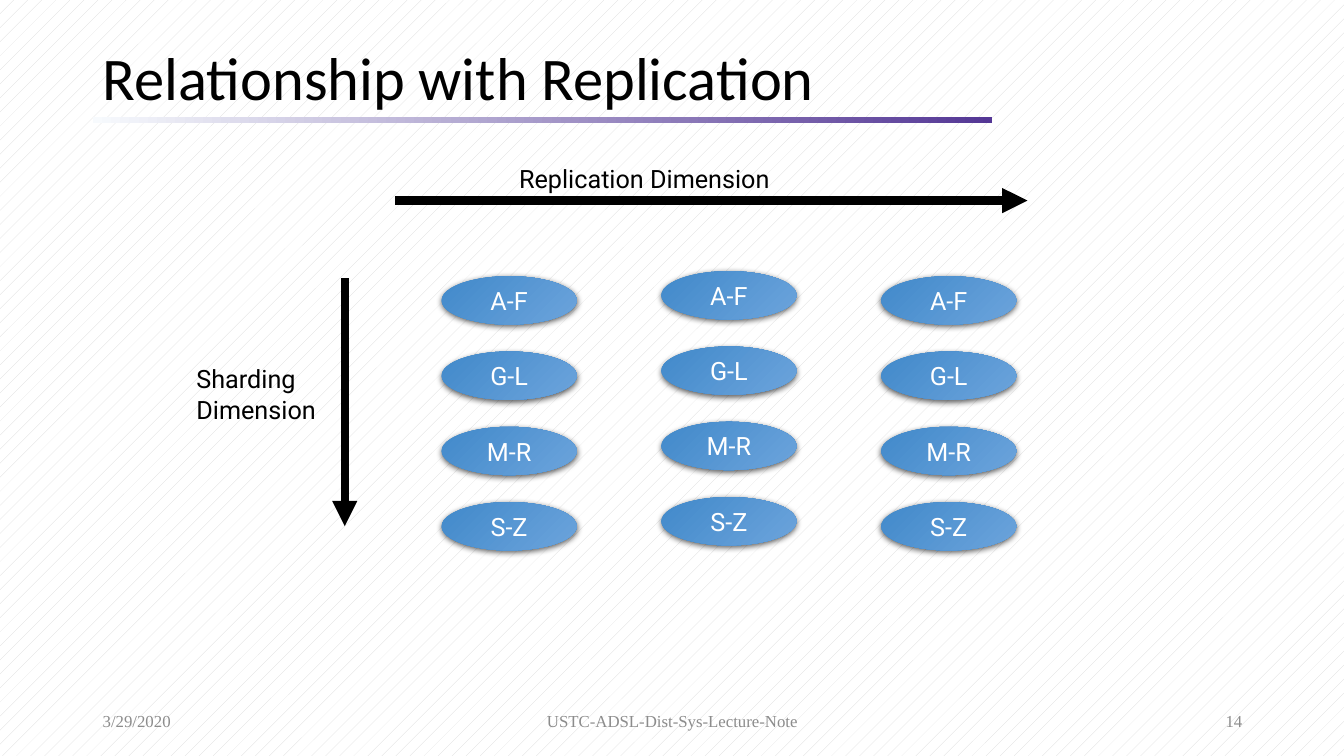
from pptx import Presentation
from pptx import util as u
from pptx.dml.color import RGBColor
from pptx.enum import dml, shapes, text
from pptx.oxml import parse_xml
from pptx.oxml.ns import nsdecls

# Content
TITLE = "Relationship with Replication"
SHARDS = ["A-F", "G-L", "M-R", "S-Z"]
REPLICA_LIFTS = [0, 0.05, 0]  # how far each replica column is raised
LEFT, CENTER, RIGHT = text.PP_ALIGN.LEFT, text.PP_ALIGN.CENTER, text.PP_ALIGN.RIGHT
LABELS = [  # text, box
    ("Replication Dimension", (5.05, 1.57, 2.71, 0.4)),
    ("Sharding\nDimension", (1.85, 3.56, 1.44, 0.71)),
]
ARROWS = [(3.92, 1.99, 10.19, 1.99), (3.42, 2.76, 3.42, 5.22)]
FOOTERS = [  # text, left, width, alignment
    ("3/29/2020", 0.92, 3, LEFT),
    ("USTC-ADSL-Dist-Sys-Lecture-Note", 4.42, 4.5, CENTER),
    ("14", 9.42, 3, RIGHT),
]

# Theme and grid
THEME = {
    "title": {"name": "Calibri", "size": 43.2, "color": "000000"},
    "label": {"name": "Roboto", "size": 18, "color": "000000"},
    "shard": {"name": "Roboto", "size": 18, "color": "FFFFFF"},
    "footer": {"name": "Times New Roman", "size": 12, "color": "8C8C8C"},
    "rule": ("F7FAFD", "543795"),
    "ellipse": ("4189CA", "6CA4DC"),
    "pattern": ("D9D9D9", "FFFFFF"),
    "arrow": "000000",
}
GRID_LEFT, GRID_TOP = 4.38, 2.74
COLUMN_STEP, ROW_STEP = 2.18, 0.747
SHARD_WIDTH, SHARD_HEIGHT = 1.34, 0.48
SHADOW = (
    f'<a:effectLst {nsdecls("a")}><a:outerShdw blurRad="57150" dist="19050" dir="5400000" '
    'algn="ctr" rotWithShape="0"><a:srgbClr val="000000"><a:alpha val="63000"/></a:srgbClr>'
    "</a:outerShdw></a:effectLst>"
)


def inches(values):
    return [u.Inches(value) for value in values]


def write(shape, words, style, alignment=LEFT, wrap=True, spacing=None,
          anchor=text.MSO_ANCHOR.MIDDLE):
    frame = shape.text_frame
    frame.word_wrap = wrap
    frame.vertical_anchor = anchor
    paragraph = frame.paragraphs[0]
    paragraph.text = words
    paragraph.alignment = alignment
    paragraph.line_spacing = spacing
    look = THEME[style]
    for run in paragraph.runs:
        for name, value in {"name": look["name"], "size": u.Pt(look["size"])}.items():
            setattr(run.font, name, value)
        run.font.color.rgb = RGBColor.from_string(look["color"])


def add_gradient_shape(parent, kind, box, colors, angle):
    shape = parent.add_shape(kind, *inches(box))
    shape.shadow.inherit = False
    shape.line.fill.background()
    shape.fill.gradient()
    shape.fill.gradient_angle = angle
    for stop, color in zip(shape.fill.gradient_stops, colors):
        stop.color.rgb = RGBColor.from_string(color)
    return shape


def add_shard(group, words, left, top):
    box = (left, top, SHARD_WIDTH, SHARD_HEIGHT)
    shard = add_gradient_shape(group, shapes.MSO_SHAPE.OVAL, box, THEME["ellipse"], 315)
    properties = shard._element.spPr
    properties.replace(properties.find("{*}effectLst"), parse_xml(SHADOW))
    write(shard, words, "shard", CENTER)


def add_arrow(slide, ends):
    arrow = slide.shapes.add_connector(shapes.MSO_CONNECTOR.STRAIGHT, *inches(ends))
    arrow.line.width = u.Pt(6)
    arrow.line.color.rgb = RGBColor.from_string(THEME["arrow"])
    arrow.line._get_or_add_ln().append(
        parse_xml(f'<a:tailEnd {nsdecls("a")} type="triangle"/>'))
    arrow._element.spPr.append(parse_xml(f'<a:effectLst {nsdecls("a")}/>'))


def main():
    presentation = Presentation()
    presentation.slide_width, presentation.slide_height = inches((13.33, 7.5))
    slide = presentation.slides.add_slide(presentation.slide_layouts[6])

    # Background pattern
    fill = slide.background.fill
    fill.patterned()
    fill.pattern = dml.MSO_PATTERN.PERCENT_5
    fill.fore_color.rgb, fill.back_color.rgb = map(RGBColor.from_string, THEME["pattern"])

    # Title and its rule
    add_gradient_shape(slide.shapes, shapes.MSO_SHAPE.RECTANGLE,
                       (0.92, 1.16, 8.92, 0.06), THEME["rule"], 0)
    title = slide.shapes.add_textbox(*inches((0.92, 0.43, 11.5, 0.75)))
    write(title, TITLE, "title", spacing=0.9)

    # One group of shards per replica
    for column, lift in enumerate(REPLICA_LIFTS):
        replica = slide.shapes.add_group_shape()
        for row, words in enumerate(SHARDS):
            add_shard(replica.shapes, words, GRID_LEFT + column * COLUMN_STEP,
                      GRID_TOP - lift + row * ROW_STEP)

    # Dimension arrows and labels
    for ends in ARROWS:
        add_arrow(slide, ends)
    for words, box in LABELS:
        label = slide.shapes.add_textbox(*inches(box))
        write(label, words, "label", wrap=False, anchor=text.MSO_ANCHOR.TOP)

    # Footer
    for words, left, width, alignment in FOOTERS:
        footer = slide.shapes.add_textbox(*inches((left, 6.95, width, 0.4)))
        write(footer, words, "footer", alignment)

    presentation.save("out.pptx")


if __name__ == "__main__":
    main()
